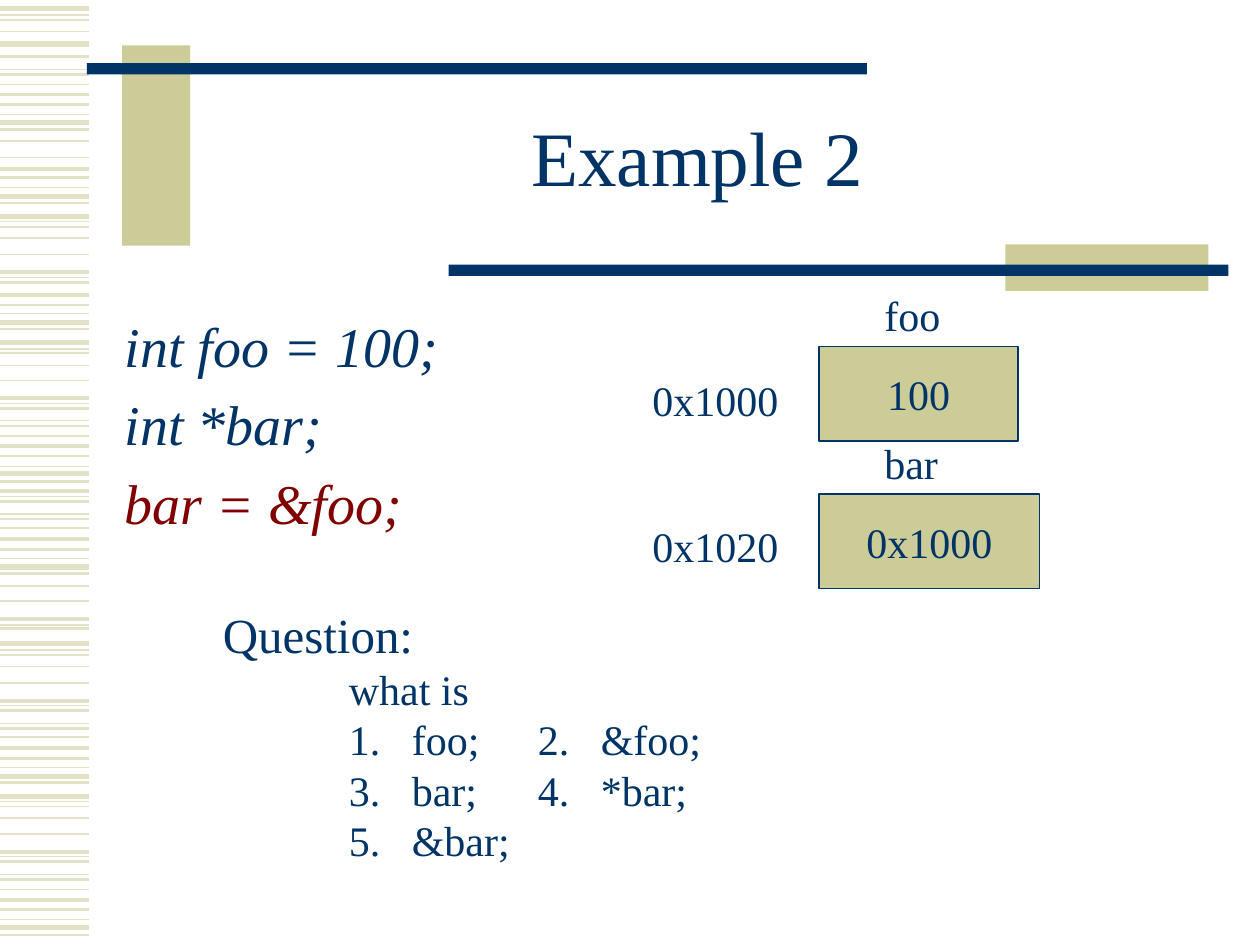
from lxml.etree import SubElement
from pptx import Presentation
from pptx.dml.color import RGBColor
from pptx.enum.shapes import MSO_CONNECTOR, MSO_SHAPE
from pptx.enum.text import MSO_ANCHOR, MSO_AUTO_SIZE, PP_ALIGN
from pptx.oxml.ns import qn
from pptx.util import Emu, Pt

PX = 9144
FONT = "Times New Roman"
COLORS = {"navy": "003366", "khaki": "CCCC99", "stripe": "E3E2C7", "maroon": "800000"}
STRIPES = {
    0.75: [12, 55, 91, 149, 176, 220, 249, 277, 320, 334, 370, 394, 408, 443,
           496, 516, 560, 574, 609, 636, 680, 694, 730],
    1: [16, 25, 67, 112, 125, 180, 189, 202, 280, 290, 302, 346, 419, 465, 477,
        520, 529, 542, 585, 640, 649, 662, 706],
    1.5: [45, 59, 83, 103, 141, 161, 224, 242, 261, 324, 338, 362, 382, 398, 412,
          436, 455, 499, 564, 578, 602, 621, 684, 698, 722, 742],
    2.25: [75, 134, 216, 234, 316, 354, 390, 428, 491, 556, 594, 676, 714],
    3: [7, 35, 97, 156, 172, 256, 272, 376, 450, 511, 616, 632, 736],
}
BARS = [
    ((97, 36, 54, 159), "khaki"),
    ((69, 50, 619, 9), "navy"),
    ((798, 194, 161, 37), "khaki"),
    ((356, 210, 619, 9), "navy"),
]
CODE = [("int foo = 100;", "navy"), ("int *bar;", "navy"), ("bar = &foo;", "maroon")]
QUESTION = ["Question:", "what is", "1.\tfoo;\t2.\t&foo;", "3.\tbar;\t4.\t*bar;", "5.\t&bar;"]
CELLS = [
    ((650, 275, 158, 75), "100"),
    ((650, 392, 175, 75), "0x1000"),
]
LABELS = [
    ((692, 225, 65, 50), "foo"),
    ((692, 342, 63, 50), "bar"),
    ((508, 292, 120, 50), "0x1000"),
    ((508, 408, 120, 50), "0x1020"),
]


def px(length):
    """Turn px into EMU."""
    return Emu(length * PX)


def rgb(name):
    """Look up a colour by name."""
    return RGBColor.from_string(COLORS[name])


def format_para(para, size, color="navy", italic=None):
    """Format every run of a paragraph."""
    for span in para.runs:
        span.font.name = FONT
        span.font.size = Pt(size)
        span.font.italic = italic
        span.font.color.rgb = rgb(color)


def place(shape, area):
    """Move and size a placeholder."""
    shape.left, shape.top, shape.width, shape.height = map(px, area)
    shape.text_frame.auto_size = MSO_AUTO_SIZE.NONE


def add_stripe(page, y, weight):
    """Draw one thin stripe at the left edge."""
    stripe = page.shapes.add_connector(MSO_CONNECTOR.STRAIGHT, 0, px(y), px(71), px(y))
    stripe.line.color.rgb = rgb("stripe")
    stripe.line.width = Pt(weight)
    SubElement(stripe._element.spPr, qn("a:effectLst"))


def add_bar(page, area, color):
    """Draw a plain filled rectangle."""
    bar = page.shapes.add_shape(MSO_SHAPE.RECTANGLE, *map(px, area))
    bar.shadow.inherit = False
    bar.fill.solid()
    bar.fill.fore_color.rgb = rgb(color)
    bar.line.fill.background()
    return bar


def add_cell(page, area, text):
    """Draw an outlined memory cell with its value."""
    cell = add_bar(page, area, "khaki")
    cell.line.color.rgb = rgb("navy")
    cell.line.width = Pt(0.75)
    frame = cell.text_frame
    frame.word_wrap = False
    frame.vertical_anchor = MSO_ANCHOR.MIDDLE
    frame.text = text
    frame.paragraphs[0].alignment = PP_ALIGN.CENTER
    format_para(frame.paragraphs[0], 24)


def add_label(page, area, text):
    """Write a one-line label."""
    frame = page.shapes.add_textbox(*map(px, area)).text_frame
    frame.word_wrap = False
    frame.auto_size = MSO_AUTO_SIZE.SHAPE_TO_FIT_TEXT
    frame.text = text
    format_para(frame.paragraphs[0], 24)


def add_question(page, area, lines):
    """Write the question with its answers on tab stops."""
    frame = page.shapes.add_textbox(*map(px, area)).text_frame
    frame.word_wrap = True
    frame.text = "\n".join(lines)
    heading, *answers = frame.paragraphs
    format_para(heading, 28)
    for para in answers:
        format_para(para, 24)
        properties = para._p.get_or_add_pPr()
        properties.set("marL", str(px(100)))
        properties.set("indent", "0")
        stops = SubElement(properties, qn("a:tabLst"))
        for position in (142, 300, 342):
            SubElement(stops, qn("a:tab"), pos=str(px(position)), algn="l")


def fill_title(title, text):
    """Set the slide title."""
    place(title, (150, 67, 807, 125))
    title.text_frame.text = text
    para = title.text_frame.paragraphs[0]
    para.line_spacing = 0.85
    format_para(para, 44)


def fill_code(body, lines):
    """Set the code lines without bullets."""
    place(body, (89, 242, 870, 424))
    body.text_frame.text = "\n".join(text for text, _ in lines)
    for para, (_, color) in zip(body.text_frame.paragraphs, lines):
        SubElement(para._p.get_or_add_pPr(), qn("a:buNone"))
        format_para(para, 32, color, italic=True)


def main():
    """Build and save the slide."""
    deck = Presentation()
    deck.slide_width, deck.slide_height = px(1000), px(750)
    page = deck.slides.add_slide(deck.slide_layouts[1])
    for weight, rows in STRIPES.items():
        for y in rows:
            add_stripe(page, y, weight)
    for area, color in BARS:
        add_bar(page, area, color)
    fill_code(page.placeholders[1], CODE)
    fill_title(page.shapes.title, "Example 2")
    for area, text in CELLS:
        add_cell(page, area, text)
    for area, text in LABELS:
        add_label(page, area, text)
    add_question(page, (167, 475, 635, 256), QUESTION)
    deck.save("out.pptx")


if __name__ == "__main__":
    main()
